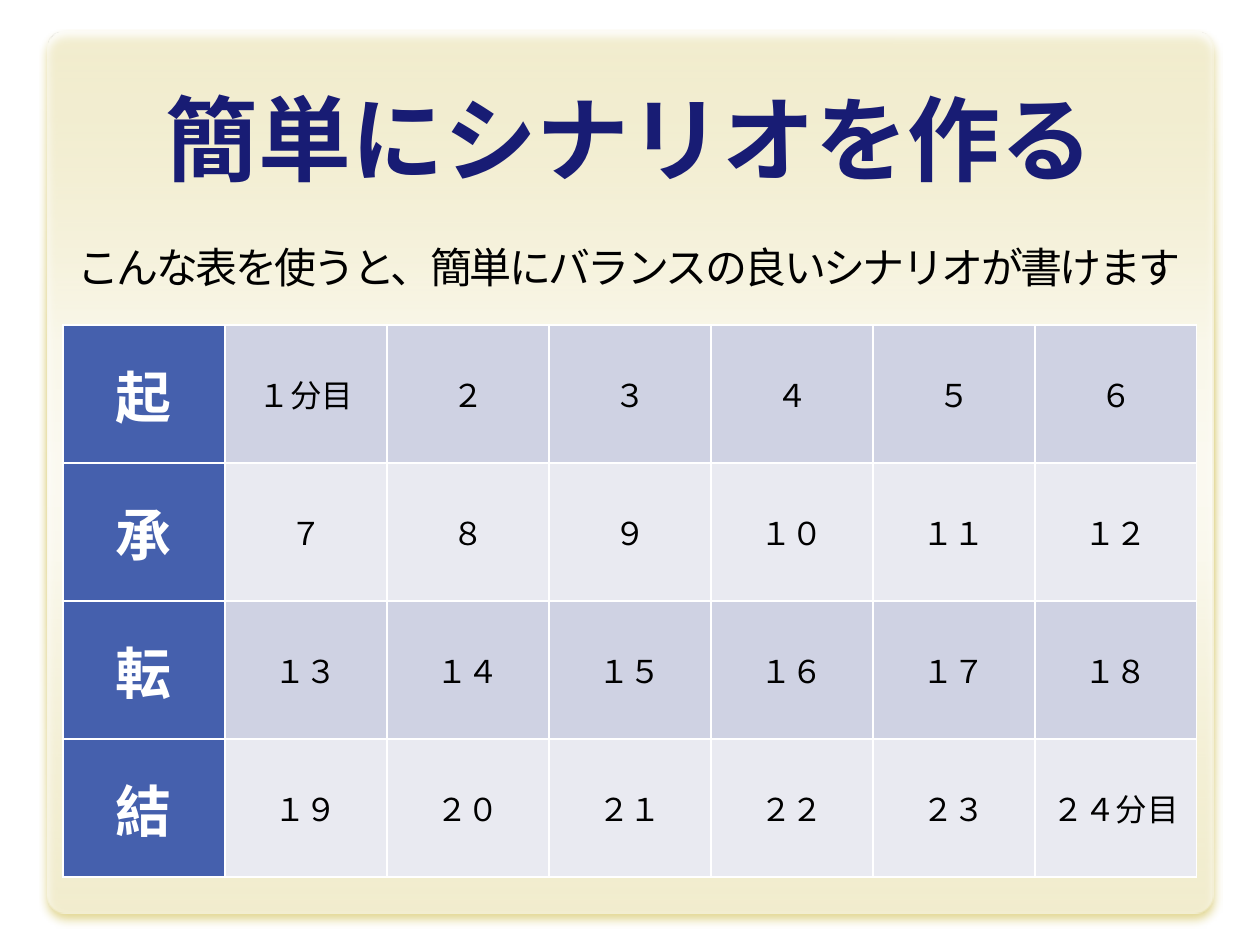
from dataclasses import dataclass

from pptx import Presentation
from pptx import oxml
from pptx.dml import color
from pptx.enum import shapes, text
from pptx.oxml import ns
from pptx.util import Inches, Pt


@dataclass(frozen=True)
class Theme:
    font: str = "Noto Sans CJK JP"
    title: str = "181C74"
    body: str = "000000"
    white: str = "FFFFFF"
    glow: str = "C5AF25"
    stage: str = "4560AD"
    bands: tuple = ("CFD2E3", "E9EAF1")
    panel_stops: tuple = ((0, 50), (35, 87), (50, 92), (60, 89), (100, 55))
    title_size: int = 53
    stage_size: int = 32
    lead_size: int = 24
    cell_size: int = 18


THEME = Theme()
STAGES = "起承転結"
MINUTES_PER_STAGE = 6
WIDE_DIGITS = str.maketrans("0123456789", "０１２３４５６７８９")


def set_attrs(target, values):
    for name, value in values.items():
        setattr(target, name, value)


def xml(tag, content="", attrs=""):
    return oxml.parse_xml(f"<a:{tag} {ns.nsdecls('a')} {attrs}>{content}</a:{tag}>")


def color_xml(rgb, alpha=100):
    return f'<a:srgbClr val="{rgb}"><a:alpha val="{alpha * 1000}"/></a:srgbClr>'


def write(tf, content, size, rgb, bold=False, spacing=0):
    p = tf.paragraphs[0]
    p.alignment = text.PP_ALIGN.CENTER
    r = p.add_run()
    r.text = content
    set_attrs(r.font, {"name": THEME.font, "size": Pt(size), "bold": bold})
    r.font.color.rgb = color.RGBColor.from_string(rgb)
    rpr = r.font._element
    rpr.append(xml("ea", attrs=f'typeface="{THEME.font}"'))
    if spacing:
        rpr.set("spc", str(int(spacing * 100)))


def add_panel(s, box):
    sp = s.shapes.add_shape(shapes.MSO_SHAPE.ROUNDED_RECTANGLE, *box)
    sp.adjustments[0] = 0.022
    sp.line.fill.background()
    stops = "".join(
        f'<a:gs pos="{pos * 1000}">{color_xml(THEME.white, alpha)}</a:gs>'
        for pos, alpha in THEME.panel_stops
    )
    gradient = xml("gradFill", f'<a:gsLst>{stops}</a:gsLst><a:lin ang="5400000" scaled="0"/>')
    shadow = xml(
        "effectLst",
        f'<a:outerShdw blurRad="{Pt(5)}" dist="{Pt(3.6)}" dir="5400000" '
        f'algn="ctr" rotWithShape="0">{color_xml(THEME.glow, 90)}</a:outerShdw>',
    )
    sppr = sp._element.spPr
    sppr.find(ns.qn("a:prstGeom")).addnext(gradient)
    sppr.append(shadow)
    s.shapes._spTree.insert(2, sp._element)


def place_title(s, box, content):
    sp = s.shapes.title
    set_attrs(sp, dict(zip(("left", "top", "width", "height"), box)))
    tf = sp.text_frame
    set_attrs(tf, {
        "word_wrap": True,
        "auto_size": text.MSO_AUTO_SIZE.NONE,
        "vertical_anchor": text.MSO_ANCHOR.BOTTOM,
    })
    write(tf, content, THEME.title_size, THEME.title, bold=True)


def add_lead(s, box, content):
    tf = s.shapes.add_textbox(*box).text_frame
    set_attrs(tf, {"word_wrap": False, "auto_size": text.MSO_AUTO_SIZE.SHAPE_TO_FIT_TEXT})
    write(tf, content, THEME.lead_size, THEME.body, spacing=-1.5)


def format_cell(cell, fill):
    cell.vertical_anchor = text.MSO_ANCHOR.MIDDLE
    tcpr = cell._tc.get_or_add_tcPr()
    for side in ("lnL", "lnR", "lnT", "lnB"):
        line = f"<a:solidFill>{color_xml(THEME.white)}</a:solidFill>"
        tcpr.append(xml(side, line, f'w="{Pt(1)}"'))
    cell.fill.solid()
    cell.fill.fore_color.rgb = color.RGBColor.from_string(fill)


def minute_label(minute):
    suffix = "分目" if minute in (1, len(STAGES) * MINUTES_PER_STAGE) else ""
    return str(minute).translate(WIDE_DIGITS) + suffix


def add_scenario_table(s, box):
    left, top, width, height = box
    rows, cols = len(STAGES), MINUTES_PER_STAGE + 1
    table = s.shapes.add_table(rows, cols, left, top, width, height).table
    set_attrs(table, {"first_row": False, "horz_banding": False})
    for column in table.columns:
        column.width = width // cols
    for i, stage in enumerate(STAGES):
        table.rows[i].height = height // rows
        for j in range(cols):
            cell = table.cell(i, j)
            if j == 0:
                format_cell(cell, THEME.stage)
                write(cell.text_frame, stage, THEME.stage_size, THEME.white, bold=True)
            else:
                format_cell(cell, THEME.bands[i % 2])
                label = minute_label(i * MINUTES_PER_STAGE + j)
                write(cell.text_frame, label, THEME.cell_size, THEME.body)


def inches(*lengths):
    return tuple(Inches(length) for length in lengths)


def main():
    prs = Presentation()
    set_attrs(prs, {"slide_width": Inches(10), "slide_height": Inches(7.5)})
    s = prs.slides.add_slide(prs.slide_layouts[5])
    add_panel(s, inches(0.38, 0.25, 9.25, 7))
    place_title(s, inches(0.5, 0.33, 9, 1.25), "簡単にシナリオを作る")
    add_scenario_table(s, inches(0.5, 2.58, 9, 4.38))
    add_lead(s, inches(0.47, 1.87, 9.04, 0.5),
             "こんな表を使うと、簡単にバランスの良いシナリオが書けます")
    prs.save("out.pptx")


if __name__ == "__main__":
    main()
